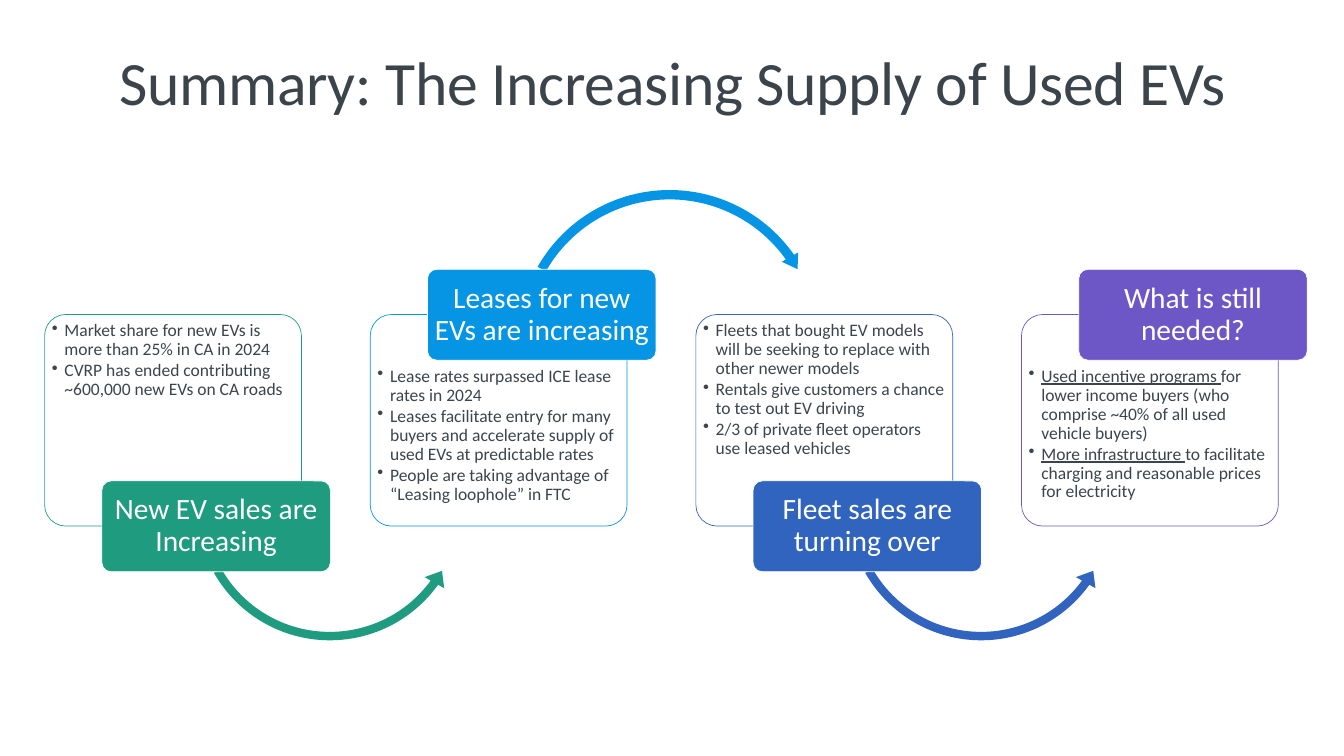
from lxml import etree
from pptx import Presentation, util as u
from pptx.dml.color import RGBColor
from pptx.enum import shapes, text
from pptx.oxml.ns import qn

PX = 9525  # EMU per px
KIND = shapes.MSO_SHAPE
FACE = "Calibri"
HUES = {"green": "1F9C7F", "sky": "0695E5", "blue": "3064BE", "violet": "6D57C7",
        "white": "FFFFFF", "body": "3C444C", "title": "3B444B"}

# Card grid
LEFT, TOP, PITCH = 85, 599, 620
CARD_W, CARD_H = 489, 403
TAG_W, TAG_H, TAG_DX = 435, 173, 109
HIGH, LOW = 513, 916  # tops of the raised and lowered tags

# Arrow: kind, offset from card, top, size, adjustments
UNDER = (KIND.LEFT_CIRCULAR_ARROW, 276, 699, 534, (0.03, 3.74, 21.5, 90.25, 0.04))
OVER = (KIND.CIRCULAR_ARROW, 272, 353, 596, (0.03, 3.33, 194.92, 125.76, 0.03))

# Hue, tag, tag top, arrow, bullets as (underlined lead, rest)
STEPS = [
    ("green", "New EV sales are Increasing", LOW, UNDER, [
        ("", "Market share for new EVs is more than 25% in CA in 2024"),
        ("", "CVRP has ended contributing ~600,000 new EVs on CA roads")]),
    ("sky", "Leases for new EVs are increasing", HIGH, OVER, [
        ("", "Lease rates surpassed ICE lease rates in 2024"),
        ("", "Leases facilitate entry for many buyers and accelerate supply of "
             "used EVs at predictable rates"),
        ("", "People are taking advantage of “Leasing loophole” in FTC")]),
    ("blue", "Fleet sales are turning over", LOW, UNDER, [
        ("", "Fleets that bought EV models will be seeking to replace with "
             "other newer models"),
        ("", "Rentals give customers a chance to test out EV driving"),
        ("", "2/3 of private fleet operators use leased vehicles")]),
    ("violet", "What is still needed?", HIGH, None, [
        ("Used incentive programs ", "for lower income buyers (who comprise ~40% "
                                     "of all used vehicle buyers)"),
        ("More infrastructure ", "to facilitate charging and reasonable prices "
                                 "for electricity")]),
]


def rgb(hue):
    return RGBColor.from_string(HUES[hue])


def px(*vals):
    return [u.Emu(v * PX) for v in vals]


def style(item, **attrs):
    for name, val in attrs.items():
        setattr(item, name, val)


def shape(slide, kind, box, fill, line=None, adj=()):
    item = slide.shapes.add_shape(kind, *px(*box))
    item.shadow.inherit = False
    item.fill.solid()
    item.fill.fore_color.rgb = rgb(fill)
    if line:
        item.line.color.rgb = rgb(line)
        item.line.width = u.Pt(1)
    else:
        item.line.fill.background()
    for i, val in enumerate(adj):
        item.adjustments[i] = val
    return item


def frame(item, pads, anchor):
    left, top, right, bottom = px(*pads)
    style(item.text_frame, margin_left=left, margin_top=top, margin_right=right,
          margin_bottom=bottom, word_wrap=True, vertical_anchor=anchor)
    return item.text_frame


def write(para, words, size, hue, line=False):
    run = para.add_run()
    run.text = words
    style(run.font, name=FACE, size=u.Pt(size), underline=line or None)
    run.font.color.rgb = rgb(hue)
    return run


def bullet(para):
    props = para._p.get_or_add_pPr()
    props.set("marL", str(24 * PX))
    props.set("indent", str(-24 * PX))
    etree.SubElement(props, qn("a:buChar")).set("char", "•")
    style(para, alignment=text.PP_ALIGN.LEFT, line_spacing=0.9, space_after=u.Pt(3))


def title(slide, words):
    item = slide.shapes.add_textbox(*px(103, 82, 2354, 144))
    para = frame(item, (0, 2, 0, 0), text.MSO_ANCHOR.MIDDLE).paragraphs[0]
    para.alignment = text.PP_ALIGN.CENTER
    run = write(para, words, 88, "title")
    run.font._element.set("spc", "-40")


def card(slide, x, hue, head, items):
    item = shape(slide, KIND.ROUNDED_RECTANGLE, (x, TOP, CARD_W, CARD_H),
                 "white", hue, (0.1,))
    body = frame(item, (2, head, 2, 2), text.MSO_ANCHOR.TOP)
    for i, (lead, rest) in enumerate(items):
        para = body.add_paragraph() if i else body.paragraphs[0]
        bullet(para)
        if lead:
            write(para, lead, 25, "body", True)
        write(para, rest, 25, "body")


def tag(slide, x, y, hue, words):
    item = shape(slide, KIND.ROUNDED_RECTANGLE, (x, y, TAG_W, TAG_H),
                 hue, "white", (0.1,))
    para = frame(item, (8, 6, 8, 6), text.MSO_ANCHOR.MIDDLE).paragraphs[0]
    style(para, alignment=text.PP_ALIGN.CENTER, line_spacing=0.9)
    write(para, words, 42, "white")


def main():
    deck = Presentation()
    deck.slide_width, deck.slide_height = px(2559, 1440)
    slide = deck.slides.add_slide(deck.slide_layouts[6])

    title(slide, "Summary: The Increasing Supply of Used EVs")

    # Each step: card, curved arrow to the next, tag on top
    for i, (hue, words, y, arrow, items) in enumerate(STEPS):
        x = LEFT + i * PITCH
        card(slide, x, hue, 89 if y == HIGH else 2, items)
        if arrow:
            kind, dx, top, size, adj = arrow
            shape(slide, kind, (x + dx, top, size, size), hue, adj=adj)
        tag(slide, x + TAG_DX, y, hue, words)

    deck.save("out.pptx")


if __name__ == "__main__":
    main()
